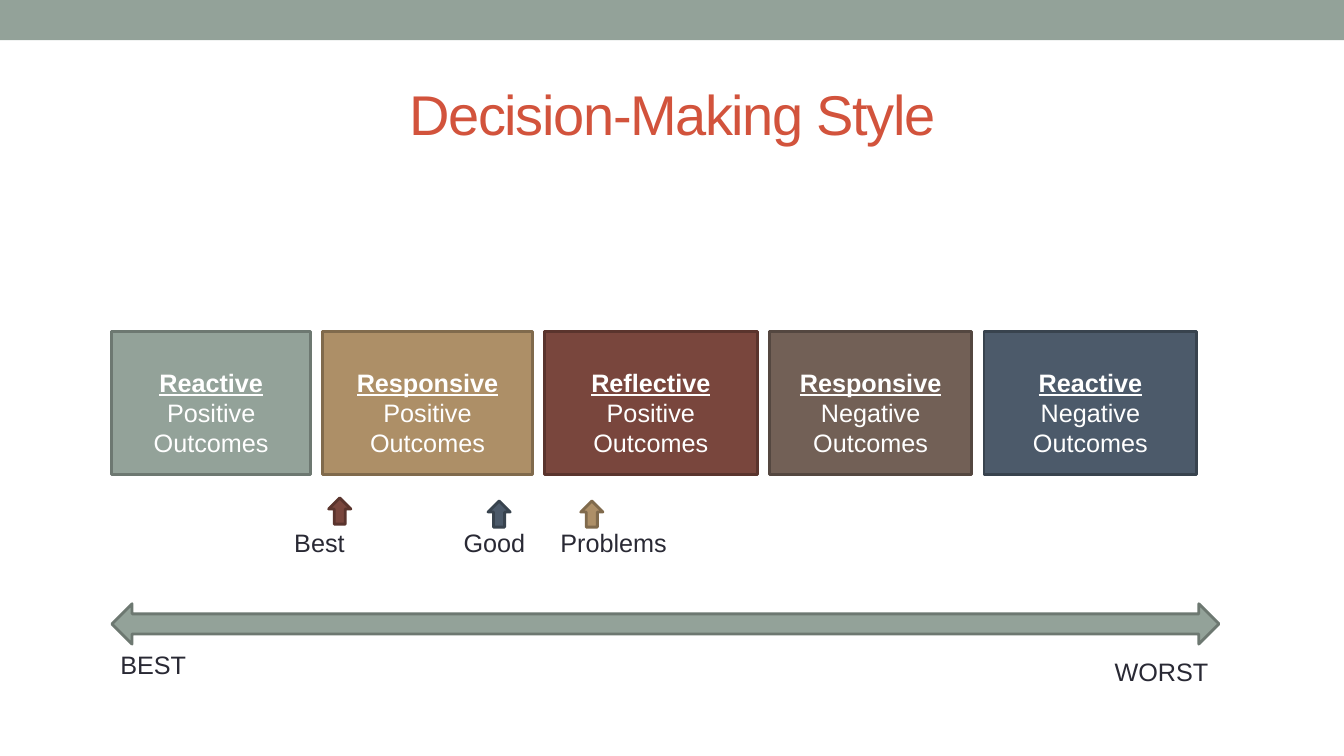
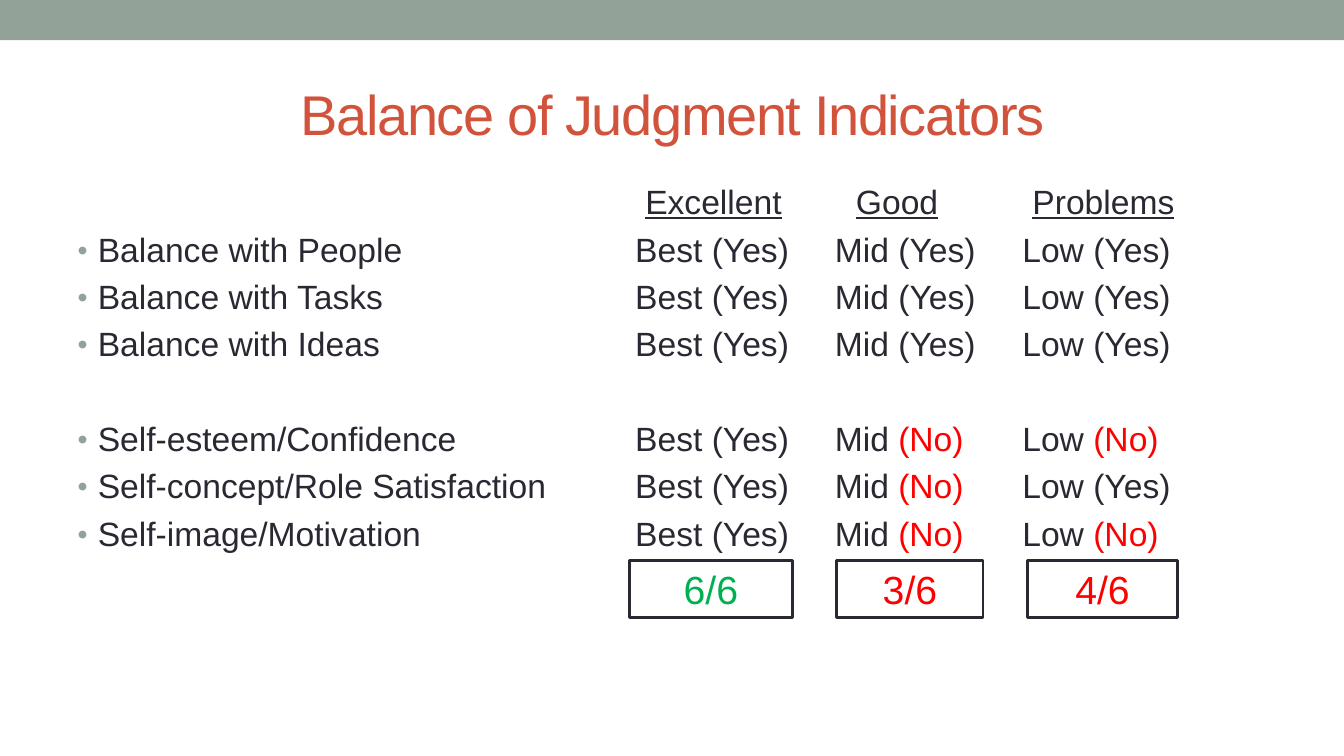
from lxml.etree import SubElement
from pptx import Presentation
from pptx.dml.color import RGBColor
from pptx.enum.shapes import MSO_SHAPE as Preset
from pptx.enum.text import MSO_ANCHOR as Anchor, PP_ALIGN as Align
from pptx.oxml.ns import qn
from pptx.util import Inches, Pt

FONT = "Arial"
WHITE = RGBColor(0xFF, 0xFF, 0xFF)
INK = RGBColor(0x29, 0x29, 0x34)
TITLE = RGBColor(0xD2, 0x53, 0x3C)
RED = RGBColor(0xFF, 0x00, 0x00)
GREEN = RGBColor(0x00, 0xB0, 0x50)
SAGE = RGBColor(0x93, 0xA2, 0x99)
SAGE_EDGE = RGBColor(0x6D, 0x78, 0x71)
TAN = RGBColor(0xAD, 0x8F, 0x67)
TAN_EDGE = RGBColor(0x80, 0x6A, 0x4C)
BRICK = RGBColor(0x79, 0x46, 0x3D)
BRICK_EDGE = RGBColor(0x5A, 0x34, 0x2D)
UMBER = RGBColor(0x72, 0x60, 0x56)
UMBER_EDGE = RGBColor(0x54, 0x47, 0x40)
SLATE = RGBColor(0x4C, 0x5A, 0x6A)
SLATE_EDGE = RGBColor(0x38, 0x43, 0x4E)

STYLES = [
    ("Reactive", "Positive", 1.97, SAGE, SAGE_EDGE),
    ("Responsive", "Positive", 2.08, TAN, TAN_EDGE),
    ("Reflective", "Positive", 2.11, BRICK, BRICK_EDGE),
    ("Responsive", "Negative", 2.01, UMBER, UMBER_EDGE),
    ("Reactive", "Negative", 2.11, SLATE, SLATE_EDGE),
]
STYLE_LEFT, STYLE_GAP = 1.11, 0.12
MARKERS = [
    ("Best", 2.82, 3.26, 4.94, BRICK, BRICK_EDGE),
    ("Good", 4.5, 4.84, 4.97, SLATE, SLATE_EDGE),
    ("Problems", 5.46, 5.76, 4.97, TAN, TAN_EDGE),
]
SCALE_ENDS = [("BEST", 1.02, 6.39, 1), ("WORST", 10.94, 6.46, 1.16)]

RATINGS = [("Excellent", 0.1), ("Good", 0.21), ("Problems", 0.1)]
LEVELS = ["Best", "Mid", "Low"]
INDICATORS = [
    ("Balance with People", ["Yes", "Yes", "Yes"]),
    ("Balance with Tasks", ["Yes", "Yes", "Yes"]),
    ("Balance with Ideas", ["Yes", "Yes", "Yes"]),
    ("Self-esteem/Confidence", ["Yes", "No", "No"]),
    ("Self-concept/Role Satisfaction", ["Yes", "No", "Yes"]),
    ("Self-image/Motivation", ["Yes", "No", "No"]),
]
GROUP_START = 4
COLUMN_EDGES = [0.77, 6.3, 8.28, 10.14, 11.9]
TABLE_TOP, ROW_HEIGHT = 1.77, 0.47
SCORES = [("6/6", 6.24, 1.62, GREEN), ("3/6", 8.3, 1.45, RED), ("4/6", 10.19, 1.49, RED)]


def add_run(paragraph, text, size, color, bold=False, underline=False):
    run = paragraph.add_run()
    run.text = text
    font = run.font
    font.name, font.size, font.bold, font.underline = FONT, Pt(size), bold, underline
    font.color.rgb = color
    return run


def add_block(slide, preset, box, fill, edge=None):
    block = slide.shapes.add_shape(preset, *map(Inches, box))
    block.shadow.inherit = False
    block.fill.solid()
    block.fill.fore_color.rgb = fill
    if edge is None:
        block.line.fill.background()
    else:
        block.line.color.rgb = edge
        block.line.width = Pt(2)
    return block


def add_label(slide, box, text, size, color, align=Align.LEFT, anchor=Anchor.TOP):
    frame = slide.shapes.add_textbox(*map(Inches, box)).text_frame
    frame.word_wrap = True
    frame.vertical_anchor = anchor
    frame.paragraphs[0].alignment = align
    return add_run(frame.paragraphs[0], text, size, color)


def add_titled_slide(deck, title):
    slide = deck.slides.add_slide(deck.slide_layouts[6])
    add_block(slide, Preset.RECTANGLE, (0, 0, 13.33, 0.4), SAGE)
    heading = add_label(slide, (0.67, 0.58, 12, 1.08), title, 40, TITLE,
                        Align.CENTER, Anchor.MIDDLE)
    heading.font._element.set("spc", "-100")
    return slide


def add_bullet(paragraph):
    props = paragraph._p.get_or_add_pPr()
    props.set("marL", str(Inches(0.2)))
    props.set("indent", str(-Inches(0.2)))
    color = SubElement(props, qn("a:buClr"))
    SubElement(color, qn("a:srgbClr"), val=str(SAGE))
    SubElement(props, qn("a:buSzPct"), val="85000")
    SubElement(props, qn("a:buFont"), typeface=FONT)
    SubElement(props, qn("a:buChar"), char="•")


def build_styles(deck):
    slide = add_titled_slide(deck, "Decision-Making Style")
    left = STYLE_LEFT
    for style, outcome, width, fill, edge in STYLES:
        block = add_block(slide, Preset.RECTANGLE, (left, 3.29, width, 1.42), fill, edge)
        frame = block.text_frame
        frame.word_wrap = True
        frame.vertical_anchor = Anchor.TOP
        frame.margin_top = Inches(0.35)
        for index, line in enumerate((style, outcome, "Outcomes")):
            paragraph = frame.add_paragraph() if index else frame.paragraphs[0]
            paragraph.alignment = Align.CENTER
            add_run(paragraph, line, 18, WHITE, bold=index == 0, underline=index == 0)
        left += width + STYLE_GAP

    add_block(slide, Preset.LEFT_RIGHT_ARROW, (1.11, 5.99, 10.98, 0.4), SAGE, SAGE_EDGE)
    for text, x, y, width in SCALE_ENDS:
        add_label(slide, (x, y, width, 0.4), text, 18, INK, Align.CENTER)
    for text, label_x, arrow_x, arrow_y, fill, edge in MARKERS:
        add_block(slide, Preset.UP_ARROW, (arrow_x, arrow_y, 0.22, 0.26), fill, edge)
        add_label(slide, (label_x, 5.18, 1.4, 0.4), text, 18, INK)


def build_indicators(deck):
    slide = add_titled_slide(deck, "Balance of Judgment Indicators")
    rows = len(INDICATORS) + 1
    table = slide.shapes.add_table(
        rows, len(RATINGS) + 1, Inches(COLUMN_EDGES[0]), Inches(TABLE_TOP),
        Inches(COLUMN_EDGES[-1] - COLUMN_EDGES[0]), Inches(ROW_HEIGHT * (rows + 1))).table
    table.first_row = table.horz_banding = False
    for column, start, end in zip(table.columns, COLUMN_EDGES, COLUMN_EDGES[1:]):
        column.width = Inches(end - start)
    for index, row in enumerate(table.rows):
        row.height = Inches(ROW_HEIGHT * (2 if index == GROUP_START else 1))
    for cell in table.iter_cells():
        cell.fill.background()
        cell.vertical_anchor = Anchor.BOTTOM
        cell.margin_left = cell.margin_right = cell.margin_top = 0
        cell.margin_bottom = Inches(0.04)

    for column, (rating, inset) in enumerate(RATINGS, 1):
        cell = table.cell(0, column)
        cell.margin_left = Inches(inset)
        add_run(cell.text_frame.paragraphs[0], rating, 24, INK, underline=True)
    for row, (indicator, answers) in enumerate(INDICATORS, 1):
        paragraph = table.cell(row, 0).text_frame.paragraphs[0]
        add_bullet(paragraph)
        add_run(paragraph, indicator, 24, INK)
        for column, (level, answer) in enumerate(zip(LEVELS, answers), 1):
            paragraph = table.cell(row, column).text_frame.paragraphs[0]
            add_run(paragraph, f"{level} ", 24, INK)
            add_run(paragraph, f"({answer})", 24, RED if answer == "No" else INK)

    for score, left, width, color in SCORES:
        block = add_block(slide, Preset.RECTANGLE, (left, 5.56, width, 0.57), WHITE, INK)
        paragraph = block.text_frame.paragraphs[0]
        paragraph.alignment = Align.CENTER
        add_run(paragraph, score, 28, color)


def main():
    deck = Presentation()
    deck.slide_width, deck.slide_height = Inches(13.33), Inches(7.5)
    build_styles(deck)
    build_indicators(deck)
    deck.save("out.pptx")


if __name__ == "__main__":
    main()
